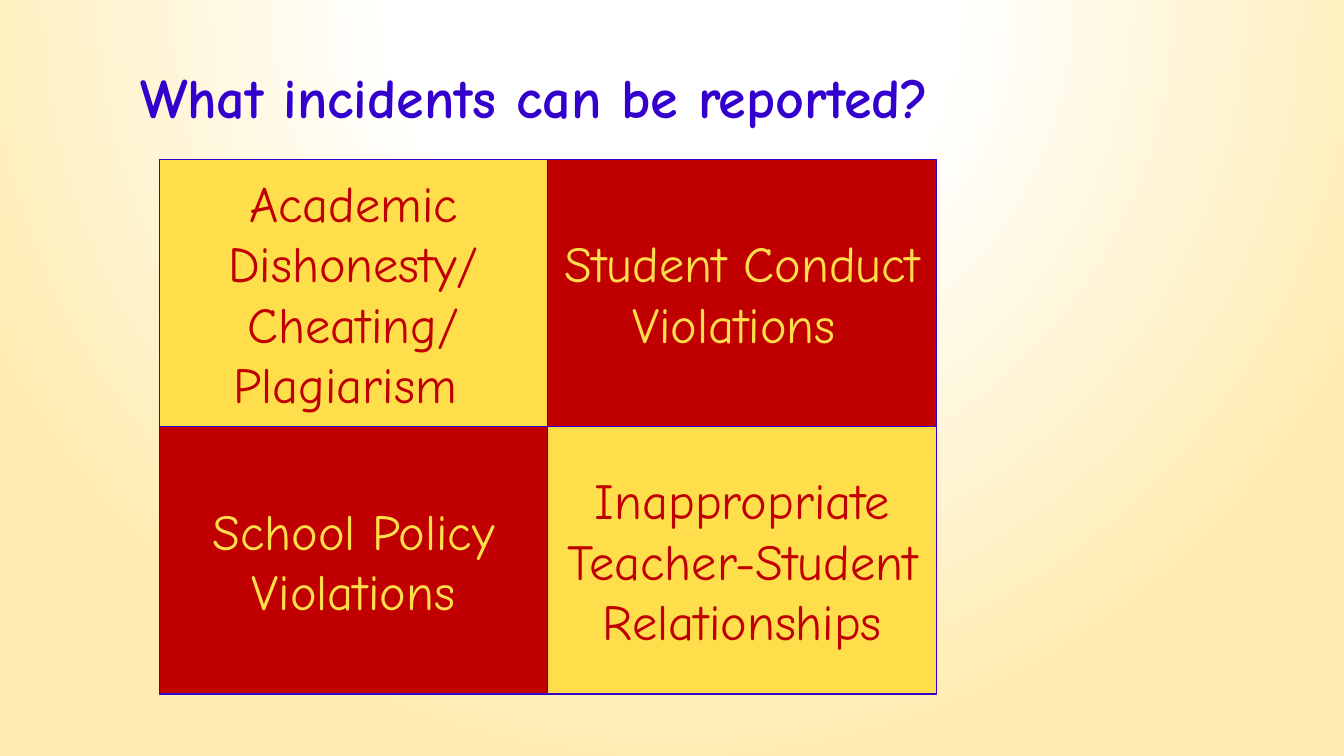
from lxml import etree
from pptx import Presentation
from pptx.dml.color import RGBColor
from pptx.enum.shapes import MSO_SHAPE
from pptx.enum.text import MSO_ANCHOR, PP_ALIGN
from pptx.oxml import parse_xml
from pptx.oxml.ns import nsdecls, qn
from pptx.util import Cm, Pt

RECT = MSO_SHAPE.RECTANGLE
MIDDLE = MSO_ANCHOR.MIDDLE
LEFT, CENTER = PP_ALIGN.LEFT, PP_ALIGN.CENTER
GOLD, RED, BLUE = "FFDE4B", "C00000", "3300CC"


def color(code):
    """Turn a hex string into a colour."""
    return RGBColor.from_string(code)


class Deck:
    """Hold the style and the current slide."""

    font = "Comic Neue"

    def __init__(self, slide):
        """Start on the given slide."""
        self.slide = slide

    def glow(self, stops):
        """Fill the background with a round gradient centred above the slide."""
        bg = parse_xml(
            f'<p:bg {nsdecls("p", "a")}><p:bgPr><a:gradFill rotWithShape="1"><a:gsLst/>'
            '<a:path path="circle"><a:fillToRect l="50000" t="-80000" r="50000" b="180000"/>'
            '</a:path></a:gradFill><a:effectLst/></p:bgPr></p:bg>'
        )
        steps = bg.find(".//" + qn("a:gsLst"))
        for spot, code in stops:
            stop = etree.SubElement(steps, qn("a:gs"), pos=str(spot * 1000))
            etree.SubElement(stop, qn("a:srgbClr"), val=code)
        self.slide.element.cSld.insert(0, bg)

    def label(self, shape, text, size, ink, align, bold=False, inset=0.25):
        """Put one styled paragraph in a shape."""
        frame = shape.text_frame
        look = {"word_wrap": True, "vertical_anchor": MIDDLE, "margin_left": Cm(inset)}
        for name, value in look.items():
            setattr(frame, name, value)
        para = frame.paragraphs[0]
        para.alignment = align
        run = para.add_run()
        run.text = text
        for name, value in {"name": self.font, "size": Pt(size), "bold": bold}.items():
            setattr(run.font, name, value)
        run.font.color.rgb = color(ink)

    def title(self, text, x, y, w, h):
        """Add the heading."""
        box = self.slide.shapes.add_textbox(Cm(x), Cm(y), Cm(w), Cm(h))
        self.label(box, text, 40, "3300CD", LEFT, True, 1.04)

    def tile(self, group, text, x, y, w, h, fill, ink):
        """Add one coloured tile to a group."""
        box = group.shapes.add_shape(RECT, Cm(x), Cm(y), Cm(w), Cm(h))
        box.shadow.inherit = False
        box.fill.solid()
        box.fill.fore_color.rgb = color(fill)
        box.line.color.rgb = color(BLUE)
        box.line.width = Pt(0.75)
        self.label(box, text, 36, ink, CENTER)

    def board(self, rows, x, y, w, h):
        """Lay out grouped tiles in a checkered grid."""
        group = self.slide.shapes.add_group_shape()
        for r, row in enumerate(rows):
            for c, text in enumerate(row):
                fill, ink = (RED, GOLD) if (r + c) % 2 else (GOLD, RED)
                self.tile(group, text, x + c * w, y + r * h, w, h, fill, ink)


def main():
    """Build and save the slide."""
    prs = Presentation()
    prs.slide_width, prs.slide_height = Cm(33.87), Cm(19.05)
    deck = Deck(prs.slides.add_slide(prs.slide_layouts[6]))
    deck.glow([(0, "FFFFFF"), (35, "FFFFFF"), (100, "FFECB1")])
    deck.title("What incidents can be reported?", 2.49, 0.84, 24, 3.18)
    deck.board([
        ["Academic Dishonesty/ Cheating/ Plagiarism ", "Student Conduct Violations "],
        ["School Policy Violations", "Inappropriate Teacher-Student Relationships"],
    ], 4.01, 4.01, 9.8, 6.74)
    prs.save("out.pptx")


if __name__ == "__main__":
    main()
